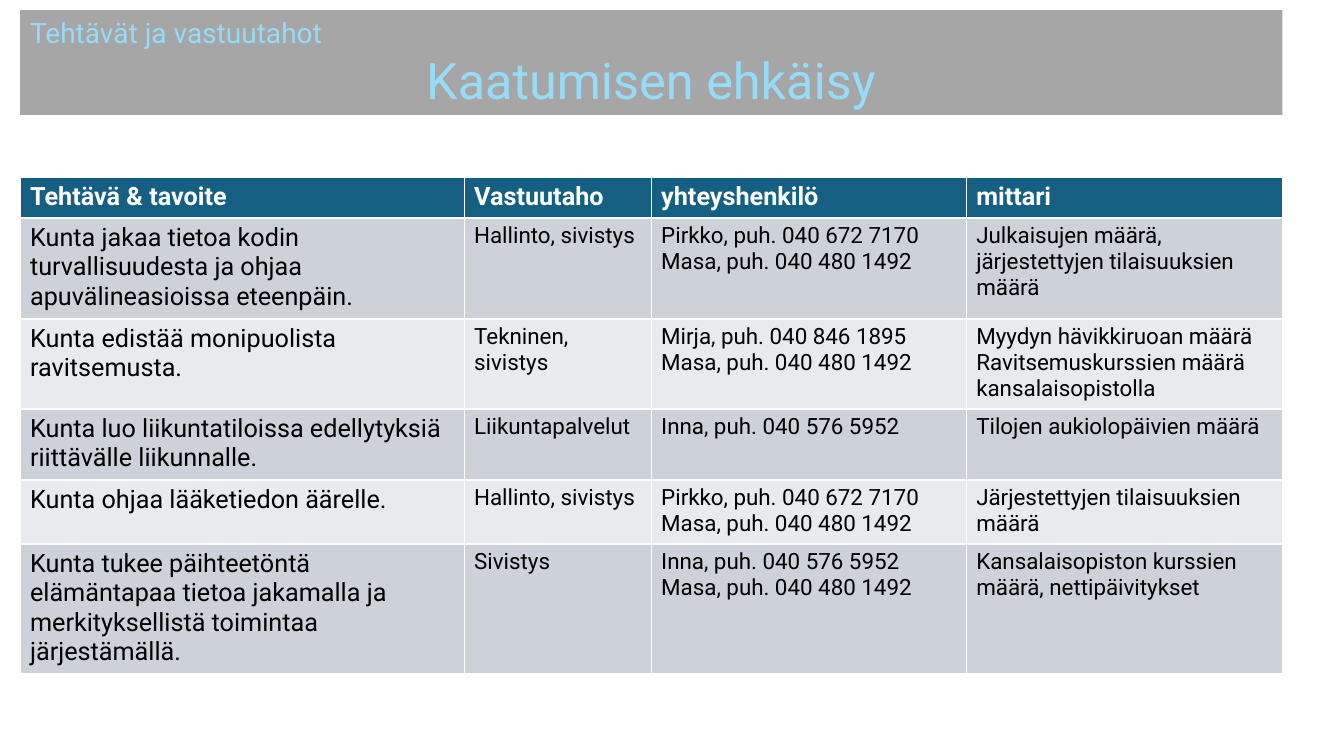
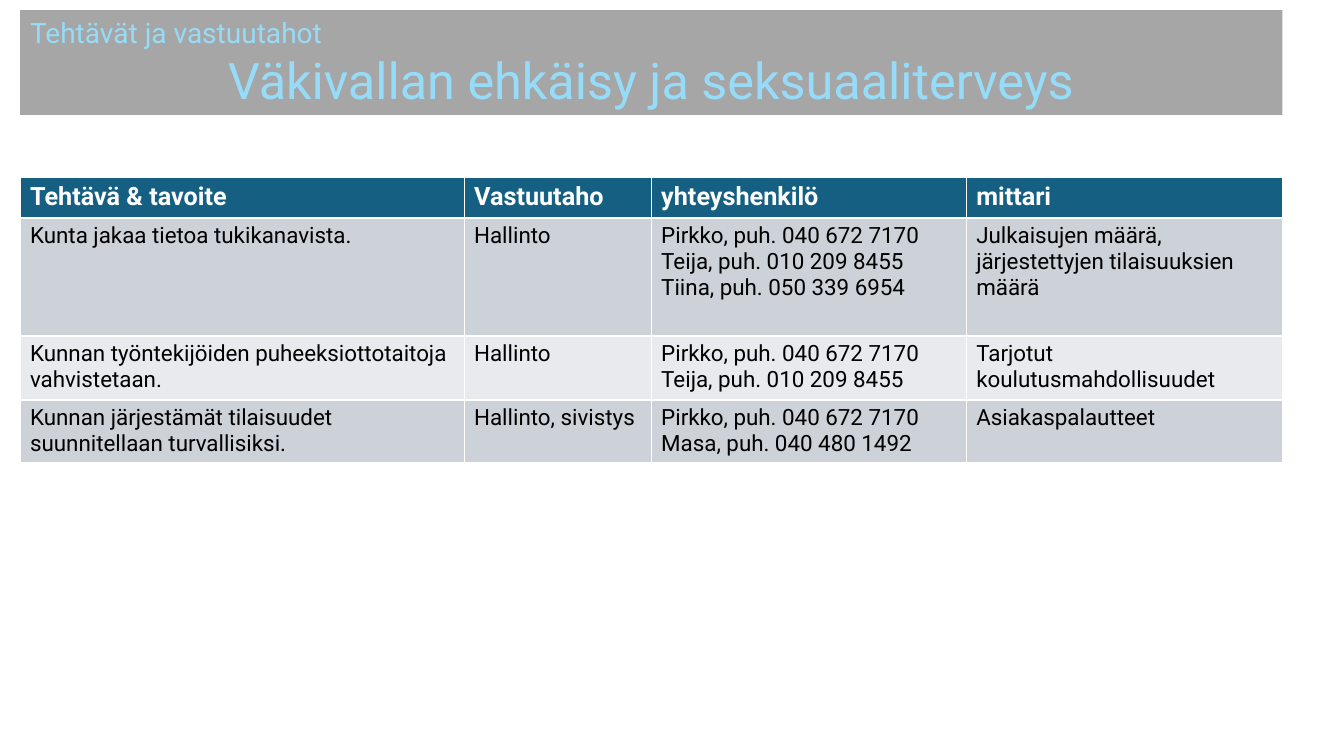
import pptx
import pptx.dml.color
import pptx.enum.text
import pptx.util

RGB = pptx.dml.color.RGBColor
ALIGN = pptx.enum.text.PP_ALIGN

# Shared look
FONT = "Roboto"
BAND_GREY = RGB(0xA6, 0xA6, 0xA6)
TITLE_BLUE = RGB(0x96, 0xDC, 0xF8)
HEADER_BLUE = RGB(0x15, 0x60, 0x82)
ROW_FILLS = (RGB(0xCC, 0xD2, 0xD8), RGB(0xE8, 0xEA, 0xED))
WHITE = RGB(0xFF, 0xFF, 0xFF)
BLACK = RGB(0x00, 0x00, 0x00)

# Lengths in px, 100.8 px to the inch
LEFT = 20
BAND_TOP, BAND_HEIGHT = 10, 105
TABLE_TOP = 177
HEADER_HEIGHT = 41
COLUMN_WIDTHS = (444, 187, 315, 316)
HEADER_SIZE, BODY_SIZE = 18, 16

# Content
SECTION = "Tehtävät ja vastuutahot"
HEADERS = ("Tehtävä & tavoite", "Vastuutaho", "yhteyshenkilö", "mittari")
PIRKKO = "Pirkko, puh. 040 672 7170"
MASA = "Masa, puh. 040 480 1492"
MIRJA = "Mirja, puh. 040 846 1895"
INNA = "Inna, puh. 040 576 5952"
TEIJA = "Teija, puh. 010 209 8455"
TIINA = "Tiina, puh. 050 339 6954"
PUBLICATIONS = "Julkaisujen määrä, järjestettyjen tilaisuuksien määrä"

# Each row: height, task, responsible party, contacts, measures
TOPICS = [
    {
        "title": "Kaatumisen ehkäisy",
        "task_size": 18,
        "rows": [
            (101, "Kunta jakaa tietoa kodin turvallisuudesta ja ohjaa "
             "apuvälineasioissa eteenpäin.",
             "Hallinto, sivistys", [PIRKKO, MASA], [PUBLICATIONS]),
            (90, "Kunta edistää monipuolista ravitsemusta.",
             "Tekninen, sivistys", [MIRJA, MASA],
             ["Myydyn hävikkiruoan määrä",
              "Ravitsemuskurssien määrä kansalaisopistolla"]),
            (71, "Kunta luo liikuntatiloissa edellytyksiä riittävälle liikunnalle.",
             "Liikuntapalvelut", [INNA], ["Tilojen aukiolopäivien määrä"]),
            (64, "Kunta ohjaa lääketiedon äärelle.",
             "Hallinto, sivistys", [PIRKKO, MASA],
             ["Järjestettyjen tilaisuuksien määrä"]),
            (130, "Kunta tukee päihteetöntä elämäntapaa tietoa jakamalla ja "
             "merkityksellistä toimintaa järjestämällä.",
             "Sivistys", [INNA, MASA],
             ["Kansalaisopiston kurssien määrä, nettipäivitykset"]),
        ],
    },
    {
        "title": "Väkivallan ehkäisy ja seksuaaliterveys",
        "task_size": 16,
        "rows": [
            (118, "Kunta jakaa tietoa tukikanavista.",
             "Hallinto", [PIRKKO, TEIJA, TIINA], [PUBLICATIONS]),
            (64, "Kunnan työntekijöiden puheeksiottotaitoja vahvistetaan.",
             "Hallinto", [PIRKKO, TEIJA], ["Tarjotut koulutusmahdollisuudet"]),
            (62, "Kunnan järjestämät tilaisuudet suunnitellaan turvallisiksi.",
             "Hallinto, sivistys", [PIRKKO, MASA], ["Asiakaspalautteet"]),
        ],
    },
]


def px(length):
    return pptx.util.Emu(round(length * 914400 / 100.8))


def style_runs(paragraph, size, color, bold=False):
    for run in paragraph.runs:
        run.font.name = FONT
        run.font.size = pptx.util.Pt(size)
        run.font.bold = bold
        run.font.color.rgb = color


def add_title_band(slide, title):
    band = slide.shapes.title
    band.left, band.top = px(LEFT), px(BAND_TOP)
    band.width, band.height = px(sum(COLUMN_WIDTHS)), px(BAND_HEIGHT)
    band.fill.solid()
    band.fill.fore_color.rgb = BAND_GREY
    frame = band.text_frame
    frame.text = f"{SECTION}\n{title}"
    frame.auto_size = pptx.enum.text.MSO_AUTO_SIZE.NONE
    frame.vertical_anchor = pptx.enum.text.MSO_ANCHOR.MIDDLE
    for paragraph, size, align in zip(
            frame.paragraphs, (20, 36), (ALIGN.LEFT, ALIGN.CENTER)):
        paragraph.alignment = align
        style_runs(paragraph, size, TITLE_BLUE)


def fill_cell(cell, text, fill, size, color, bold=False):
    cell.fill.solid()
    cell.fill.fore_color.rgb = fill
    cell.text_frame.text = text
    for paragraph in cell.text_frame.paragraphs:
        style_runs(paragraph, size, color, bold)


def add_task_table(slide, rows, task_size):
    heights = [HEADER_HEIGHT] + [row[0] for row in rows]
    table = slide.shapes.add_table(
        len(heights), len(HEADERS), px(LEFT), px(TABLE_TOP),
        px(sum(COLUMN_WIDTHS)), px(sum(heights))).table
    for column, width in zip(table.columns, COLUMN_WIDTHS):
        column.width = px(width)
    for table_row, height in zip(table.rows, heights):
        table_row.height = px(height)

    # Header row
    for c, header in enumerate(HEADERS):
        fill_cell(table.cell(0, c), header, HEADER_BLUE, HEADER_SIZE, WHITE, True)

    # Task rows in alternating fills
    for r, (_, task, party, contacts, measures) in enumerate(rows):
        texts = (task, party, "\n".join(contacts), "\n".join(measures))
        for c, text in enumerate(texts):
            fill_cell(table.cell(r + 1, c), text, ROW_FILLS[r % 2],
                      BODY_SIZE if c else task_size, BLACK)


def main():
    deck = pptx.Presentation()
    deck.slide_width = pptx.util.Inches(13.33)
    deck.slide_height = pptx.util.Inches(7.5)
    title_only = deck.slide_layouts[5]
    for topic in TOPICS:
        slide = deck.slides.add_slide(title_only)
        add_title_band(slide, topic["title"])
        add_task_table(slide, topic["rows"], topic["task_size"])
    deck.save("out.pptx")


if __name__ == "__main__":
    main()
